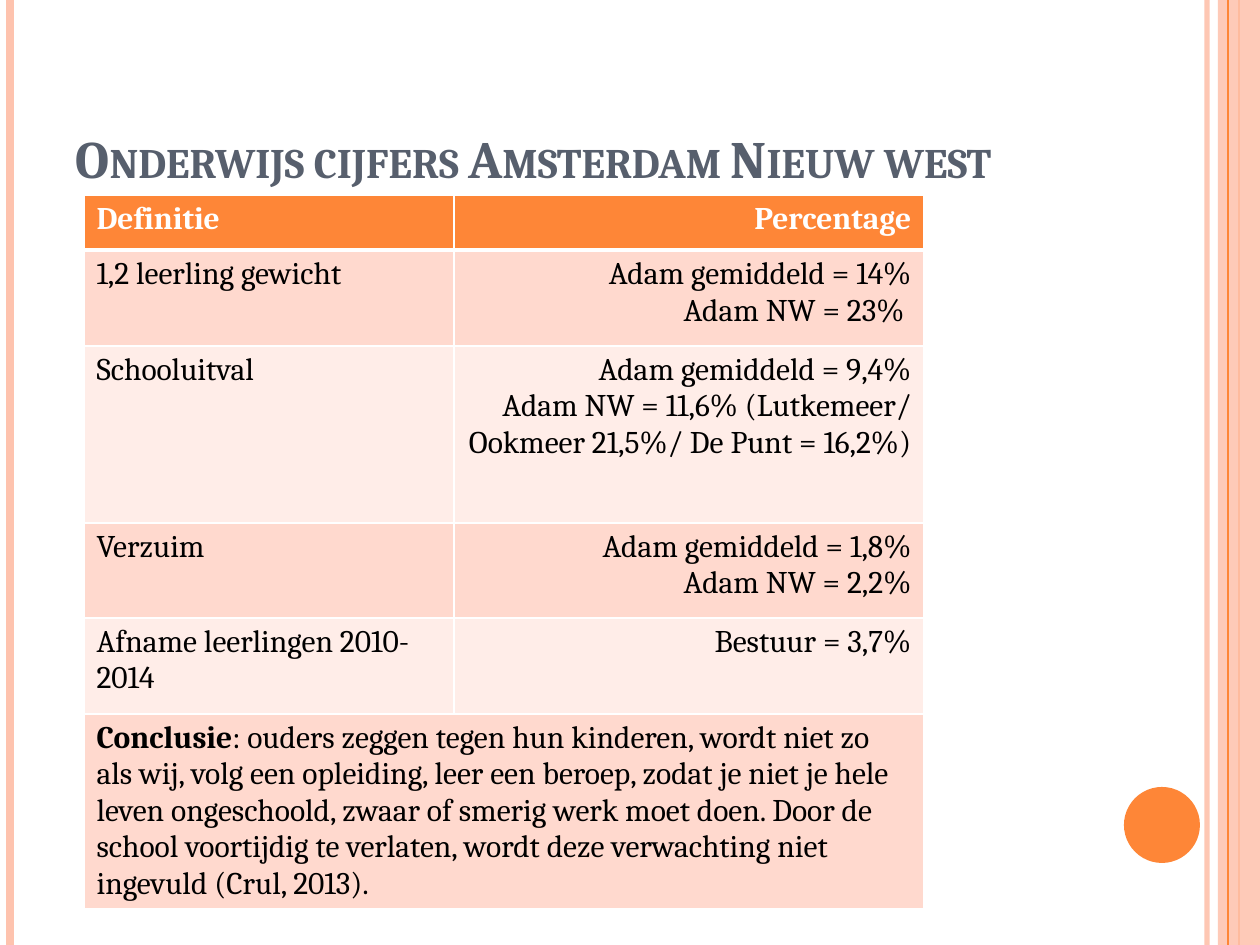
from dataclasses import dataclass

from lxml.etree import SubElement
from pptx import Presentation
from pptx.dml.color import RGBColor
from pptx.enum.shapes import MSO_CONNECTOR as CONN, MSO_SHAPE as SHAPE
from pptx.enum.text import MSO_ANCHOR as ANCHOR, MSO_AUTO_SIZE as AUTO, PP_ALIGN as ALIGN
from pptx.oxml.ns import qn
from pptx.util import Pt

PX = 914400 / 126
SLIDE_W, SLIDE_H = 1260, 945


def px(n):
    return round(n * PX)


@dataclass(frozen=True)
class Theme:
    font: str = "Cambria"
    accent: str = "FE8637"
    pale: str = "FEC3AE"
    heading: str = "575F6D"
    text: str = "000000"
    white: str = "FFFFFF"
    bands: tuple = ("FFD9CE", "FFEDE8")
    title_size: int = 30
    cell_size: int = 18


def set_alpha(fill, percent):
    color = fill._xPr.find(qn("a:solidFill"))[0]
    SubElement(color, qn("a:alpha"), val=str(percent * 1000))


class Deck:
    def __init__(self, theme):
        self.theme = theme
        self.prs = Presentation()
        self.prs.slide_width, self.prs.slide_height = px(SLIDE_W), px(SLIDE_H)
        self.s = self.prs.slides.add_slide(self.prs.slide_layouts[5])

    def run(self, p, text, size, color, bold=False):
        r = p.add_run()
        r.text = text
        f = r.font
        f.name, f.size, f.bold = self.theme.font, Pt(size), bold
        f.color.rgb = RGBColor.from_string(color)
        return r

    def stripe(self, x, color, width, alpha=100):
        """Vertical line over the full slide height."""
        line = self.s.shapes.add_connector(CONN.STRAIGHT, px(x), 0, px(x), px(SLIDE_H))
        line.line.color.rgb = RGBColor.from_string(color)
        line.line.width = Pt(width)
        if alpha < 100:
            set_alpha(line.line.fill, alpha)
        SubElement(line._element.spPr, qn("a:effectLst"))

    def shape(self, kind, x, y, w, h, color, alpha=100):
        sp = self.s.shapes.add_shape(kind, px(x), px(y), px(w), px(h))
        sp.shadow.inherit = False
        sp.fill.solid()
        sp.fill.fore_color.rgb = RGBColor.from_string(color)
        if alpha < 100:
            set_alpha(sp.fill, alpha)
        sp.line.fill.background()

    def title(self, text, x, y, w, h):
        sp = self.s.shapes.title
        sp.left, sp.top, sp.width, sp.height = map(px, (x, y, w, h))
        tf = sp.text_frame
        tf.auto_size, tf.word_wrap = AUTO.NONE, True
        tf.vertical_anchor = ANCHOR.BOTTOM
        p = tf.paragraphs[0]
        p.alignment = ALIGN.LEFT
        r = self.run(p, text, self.theme.title_size, self.theme.heading, True)
        r.font._element.set("cap", "small")

    def borders(self, cell, bottom):
        tc_pr = cell._tc.get_or_add_tcPr()
        for side, width in (("L", 1), ("R", 1), ("T", 1), ("B", bottom)):
            ln = SubElement(tc_pr, qn(f"a:ln{side}"), w=str(Pt(width)))
            fill = SubElement(ln, qn("a:solidFill"))
            SubElement(fill, qn("a:srgbClr"), val=self.theme.white)

    def table(self, x, y, widths, heights, rows):
        """Rows hold cells, cells hold paragraphs, paragraphs hold (text, bold) runs."""
        t = self.theme
        frame = self.s.shapes.add_table(len(rows), len(widths), px(x), px(y),
                                        px(sum(widths)), px(sum(heights)))
        table = frame.table
        for col, w in zip(table.columns, widths):
            col.width = px(w)
        for row, h in zip(table.rows, heights):
            row.height = px(h)
        for i, row in enumerate(rows):
            header = i == 0
            if len(row) == 1:
                table.cell(i, 0).merge(table.cell(i, len(widths) - 1))
            for j in range(len(widths)):
                cell = table.cell(i, j)
                self.borders(cell, 3 if header else 1)
                cell.fill.solid()
                cell.fill.fore_color.rgb = RGBColor.from_string(
                    t.accent if header else t.bands[(i - 1) % 2])
            for j, paragraphs in enumerate(row):
                tf = table.cell(i, j).text_frame
                for k, runs in enumerate(paragraphs):
                    p = tf.add_paragraph() if k else tf.paragraphs[0]
                    p.alignment = ALIGN.RIGHT if j else ALIGN.LEFT
                    for text, bold in runs:
                        self.run(p, text, t.cell_size, t.white if header else t.text,
                                 bold or header)


def plain(*lines):
    return [[(line, False)] for line in lines]


ROWS = [
    [plain("Definitie"), plain("Percentage")],
    [plain("1,2 leerling gewicht"), plain("Adam gemiddeld = 14%", "Adam NW = 23% ")],
    [plain("Schooluitval"),
     plain("Adam gemiddeld = 9,4%",
           "Adam NW = 11,6% (Lutkemeer/ Ookmeer 21,5%/ De Punt = 16,2%)")],
    [plain("Verzuim"), plain("Adam gemiddeld = 1,8%", "Adam NW = 2,2%")],
    [plain("Afname leerlingen 2010-2014"), plain("Bestuur = 3,7%")],
    [[[("Conclusie", True),
       (": ouders zeggen tegen hun kinderen, wordt niet zo als wij, volg een opleiding, "
        "leer een beroep, zodat je niet je hele leven ongeschoold, zwaar of smerig werk "
        "moet doen. Door de school voortijdig te verlaten, wordt deze verwachting niet "
        "ingevuld (Crul, 2013).", False)]]],
]


def main():
    theme = Theme()
    deck = Deck(theme)
    deck.stripe(1207, theme.pale, 3, 93)
    deck.stripe(10, theme.pale, 4.5)
    deck.stripe(1239, theme.accent, 1.5)
    deck.shape(SHAPE.RECTANGLE, 1218, 0, 42, SLIDE_H, theme.pale, 87)
    deck.stripe(1228, theme.accent, 0.75)
    deck.shape(SHAPE.OVAL, 1124, 787, 76, 76, theme.accent)
    deck.title("Onderwijs cijfers Amsterdam Nieuw west", 63, 38, 1029, 157)
    deck.table(84, 195, [370, 470], [55, 96, 177, 95, 96, 192], ROWS)
    deck.prs.save("out.pptx")


if __name__ == "__main__":
    main()
